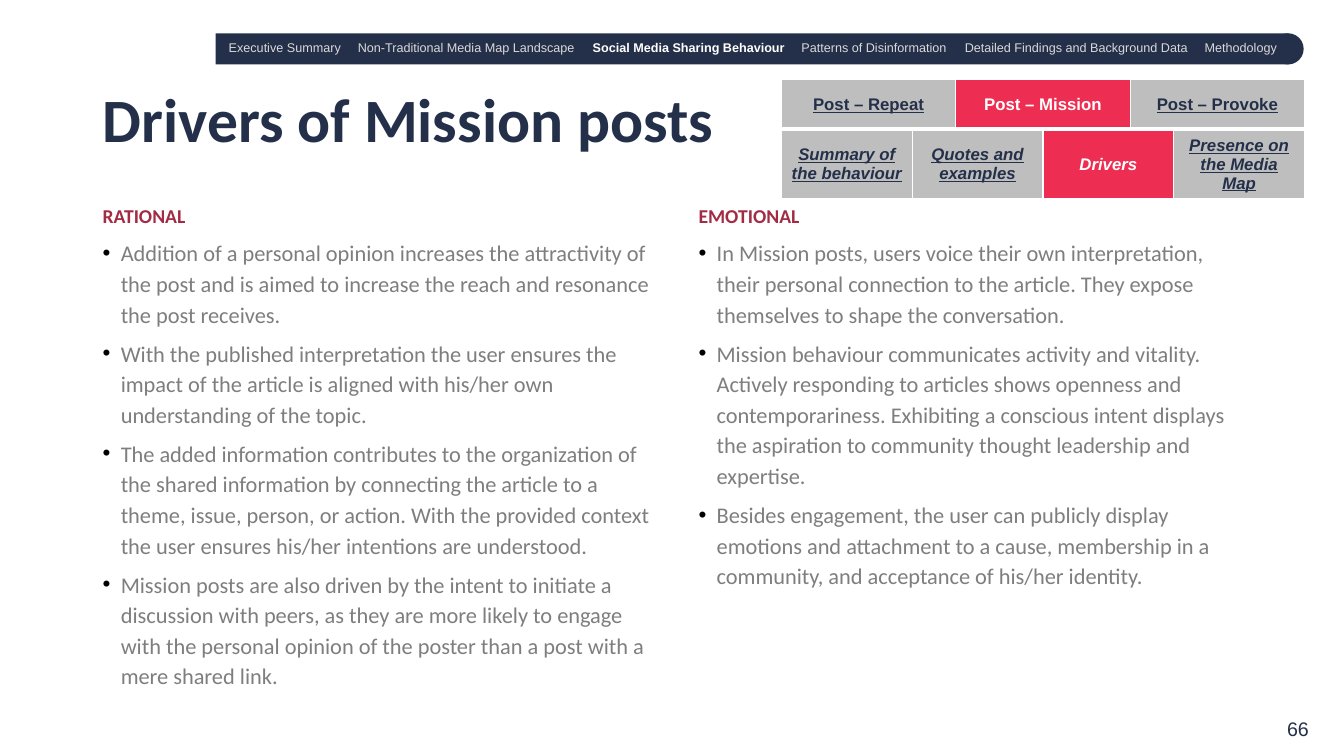
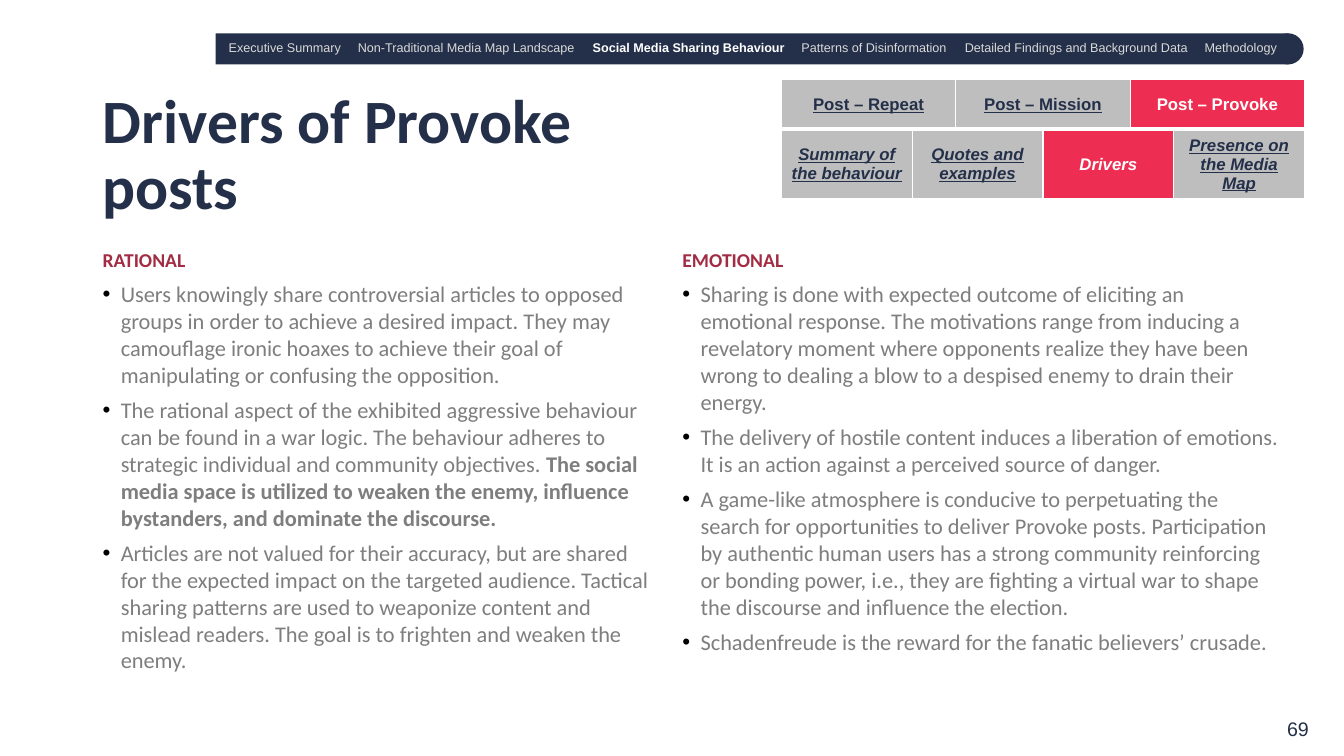
from dataclasses import dataclass

from lxml import etree
from pptx import Presentation
from pptx import util as u
from pptx.dml.color import RGBColor
from pptx.enum import shapes, text
from pptx.oxml.ns import qn

COLORS = {
    "navy": "243049", "red": "ED2E52", "wine": "A22C44", "body": "7E7E7E",
    "tab": "7F7F7F", "nav": "D9D9D9", "white": "FFFFFF", "black": "000000",
}
SECTIONS = [
    ("Executive Summary", 0), ("Non-Traditional Media Map Landscape", 1.28),
    ("Social Media Sharing Behaviour", 3.61), ("Patterns of Disinformation", 5.68),
    ("Detailed Findings and Background Data", 7.3), ("Methodology", 9.68),
]
ACTIVE_SECTION = "Social Media Sharing Behaviour"
MODES = ["Post – Repeat", "Post – Mission", "Post – Provoke"]
VIEWS = ["Summary of the behaviour", "Quotes and examples", "Drivers", "Presence on the Media Map"]
TABS_LEFT, TABS_WIDTH = 7.75, 5.19


@dataclass
class Bullet:
    text: str
    strong: str = ""


@dataclass
class Column:
    left: float
    width: float
    heading: str
    bullets: list[Bullet]


@dataclass
class Page:
    number: int
    title: str
    title_top: float
    body_top: float
    body_height: float
    heading_spacing: float
    bullet_spacing: float
    mode: str
    columns: list[Column]


PAGES = [
    Page(66, "Drivers of Mission posts", 0.49, 1.94, 3.89, 1.14, 1.14, "Post – Mission", [
        Column(0.92, 5.67, "RATIONAL", [
            Bullet("Addition of a personal opinion increases the attractivity of the post and is aimed to "
                   "increase the reach and resonance the post receives."),
            Bullet("With the published interpretation the user ensures the impact of the article is aligned "
                   "with his/her own understanding of the topic."),
            Bullet("The added information contributes to the organization of the shared information by "
                   "connecting the article to a theme, issue, person, or action. With the provided context "
                   "the user ensures his/her intentions are understood."),
            Bullet("Mission posts are also driven by the intent to initiate a discussion with peers, as they "
                   "are more likely to engage with the personal opinion of the poster than a post with a "
                   "mere shared link."),
        ]),
        Column(6.83, 5.67, "EMOTIONAL", [
            Bullet("In Mission posts, users voice their own interpretation, their personal connection to the "
                   "article. They expose themselves to shape the conversation."),
            Bullet("Mission behaviour communicates activity and vitality. Actively responding to articles "
                   "shows openness and contemporariness. Exhibiting a conscious intent displays the "
                   "aspiration to community thought leadership and expertise."),
            Bullet("Besides engagement, the user can publicly display emotions and attachment to a cause, "
                   "membership in a community, and acceptance of his/her identity."),
        ]),
    ]),
    Page(69, "Drivers of Provoke\nposts", 0.83, 2.44, 4.17, 0.9, 1.0, "Post – Provoke", [
        Column(0.92, 5.67, "RATIONAL", [
            Bullet("Users knowingly share controversial articles to opposed groups in order to achieve a "
                   "desired impact. They may camouflage ironic hoaxes to achieve their goal of manipulating "
                   "or confusing the opposition."),
            Bullet("The rational aspect of the exhibited aggressive behaviour can be found in a war logic. "
                   "The behaviour adheres to strategic individual and community objectives.",
                   " The social media space is utilized to weaken the enemy, influence bystanders, and "
                   "dominate the discourse."),
            Bullet("Articles are not valued for their accuracy, but are shared for the expected impact on the "
                   "targeted audience. Tactical sharing patterns are used to weaponize content and mislead "
                   "readers. The goal is to frighten and weaken the enemy."),
        ]),
        Column(6.67, 6.12, "EMOTIONAL", [
            Bullet("Sharing is done with expected outcome of eliciting an emotional response. The motivations "
                   "range from inducing a revelatory moment where opponents realize they have been wrong to "
                   "dealing a blow to a despised enemy to drain their energy."),
            Bullet("The delivery of hostile content induces a liberation of emotions. It is an action against "
                   "a perceived source of danger."),
            Bullet("A game-like atmosphere is conducive to perpetuating the search for opportunities to "
                   "deliver Provoke posts. Participation by authentic human users has a strong community "
                   "reinforcing or bonding power, i.e., they are fighting a virtual war to shape the "
                   "discourse and influence the election."),
            Bullet("Schadenfreude is the reward for the fanatic believers’ crusade."),
        ]),
    ]),
]


def rgb(name: str) -> RGBColor:
    return RGBColor.from_string(COLORS[name])


def child(parent, tag: str, **attrs):
    return etree.SubElement(parent, qn(tag), **attrs)


def write(p, content: str, *, size: float, color: str, font: str = "Calibri",
          bold: bool = False, italic: bool = False, underline: bool = False) -> None:
    for i, line in enumerate(content.split("\n")):
        if i:
            p.add_line_break()
        r = p.add_run()
        r.text = line
        r.font.name, r.font.size = font, u.Pt(size)
        r.font.bold, r.font.italic, r.font.underline = bold, italic, underline
        r.font.color.rgb = rgb(color)


def add_frame(s, left: float, top: float, width: float, height: float,
              anchor=text.MSO_ANCHOR.TOP):
    box = s.shapes.add_textbox(u.Inches(left), u.Inches(top), u.Inches(width), u.Inches(height))
    tf = box.text_frame
    tf.word_wrap = True
    tf.vertical_anchor = anchor
    return tf


def add_bar_part(s, kind, left: float, width: float) -> None:
    sp = s.shapes.add_shape(kind, u.Inches(left), u.Inches(0.33), u.Inches(width), u.Inches(0.31))
    sp.shadow.inherit = False
    sp.fill.solid()
    sp.fill.fore_color.rgb = rgb("navy")
    sp.line.fill.background()


def add_navigation(s) -> None:
    add_bar_part(s, shapes.MSO_SHAPE.RECTANGLE, 2.14, 10.64)
    add_bar_part(s, shapes.MSO_SHAPE.OVAL, 12.62, 0.31)
    p = add_frame(s, 2.17, 0.34, 10.71, 0.27, text.MSO_ANCHOR.MIDDLE).paragraphs[0]
    tabs = child(p._p.get_or_add_pPr(), "a:tabLst")
    for name, pos in SECTIONS:
        if pos:
            child(tabs, "a:tab", pos=str(u.Inches(pos)), algn="l")
        active = name == ACTIVE_SECTION
        write(p, "\t" + name if pos else name, size=9, font="Arial",
              color="white" if active else "nav", bold=active)


def style_cell(cell, active: bool) -> None:
    cell.vertical_anchor = text.MSO_ANCHOR.MIDDLE
    cell.fill.solid()
    cell.fill.fore_color.rgb = rgb("red" if active else "tab")
    tc_pr = cell._tc.get_or_add_tcPr()
    if not active:
        child(tc_pr.find(".//" + qn("a:srgbClr")), "a:alpha", val="50000")
    for i, (side, width) in enumerate([("L", 1), ("R", 1), ("T", 1), ("B", 3)]):
        ln = child(tc_pr, f"a:ln{side}", w=str(u.Pt(width)))
        child(child(ln, "a:solidFill"), "a:srgbClr", val=COLORS["white"])
        tc_pr.insert(i, ln)


def add_tabs(s, labels: list[str], active: str, top: float, height: float,
             italic: bool = False) -> None:
    table = s.shapes.add_table(1, len(labels), u.Inches(TABS_LEFT), u.Inches(top),
                               u.Inches(TABS_WIDTH), u.Inches(height)).table
    table.first_row = table.horz_banding = False
    for i, label in enumerate(labels):
        table.columns[i].width = u.Inches(TABS_WIDTH / len(labels))
        cell = table.cell(0, i)
        on = label == active
        style_cell(cell, on)
        cell.margin_left = cell.margin_right = u.Inches(0.1)
        cell.margin_top = cell.margin_bottom = u.Inches(0.05)
        p = cell.text_frame.paragraphs[0]
        p.alignment = text.PP_ALIGN.CENTER
        write(p, label, size=12, font="Arial", color="white" if on else "navy",
              bold=True, italic=italic, underline=not on)


def add_column(s, page: Page, col: Column) -> None:
    tf = add_frame(s, col.left, page.body_top, col.width, page.body_height)
    p = tf.paragraphs[0]
    p.line_spacing = page.heading_spacing
    write(p, col.heading, size=14, color="wine", bold=True)
    for bullet in col.bullets:
        p = tf.add_paragraph()
        p.line_spacing, p.space_before = page.bullet_spacing, u.Pt(6)
        p_pr = p._p.get_or_add_pPr()
        p_pr.set("marL", str(u.Inches(0.18)))
        p_pr.set("indent", str(-u.Inches(0.18)))
        child(child(p_pr, "a:buClr"), "a:srgbClr", val=COLORS["black"])
        child(p_pr, "a:buFont", typeface="Arial")
        child(p_pr, "a:buChar", char="•")
        write(p, bullet.text, size=16, color="body")
        if bullet.strong:
            write(p, bullet.strong, size=16, color="body", bold=True)


def add_page(prs, page: Page) -> None:
    s = prs.slides.add_slide(prs.slide_layouts[6])
    add_navigation(s)
    p = add_frame(s, 0.92, page.title_top, 11.5, 1.45, text.MSO_ANCHOR.MIDDLE).paragraphs[0]
    p.line_spacing = 0.9
    write(p, page.title, size=44, color="navy", bold=True)
    for col in page.columns:
        add_column(s, page, col)
    add_tabs(s, VIEWS, "Drivers", 1.28, 0.55, italic=True)
    add_tabs(s, MODES, page.mode, 0.79, 0.49)
    p = add_frame(s, 11.9, 7.06, 1.18, 0.34).paragraphs[0]
    p.alignment = text.PP_ALIGN.RIGHT
    write(p, str(page.number), size=14, font="Arial", color="navy")


def main() -> None:
    prs = Presentation()
    prs.slide_width, prs.slide_height = u.Inches(13.33), u.Inches(7.5)
    for page in PAGES:
        add_page(prs, page)
    prs.save("out.pptx")


if __name__ == "__main__":
    main()
